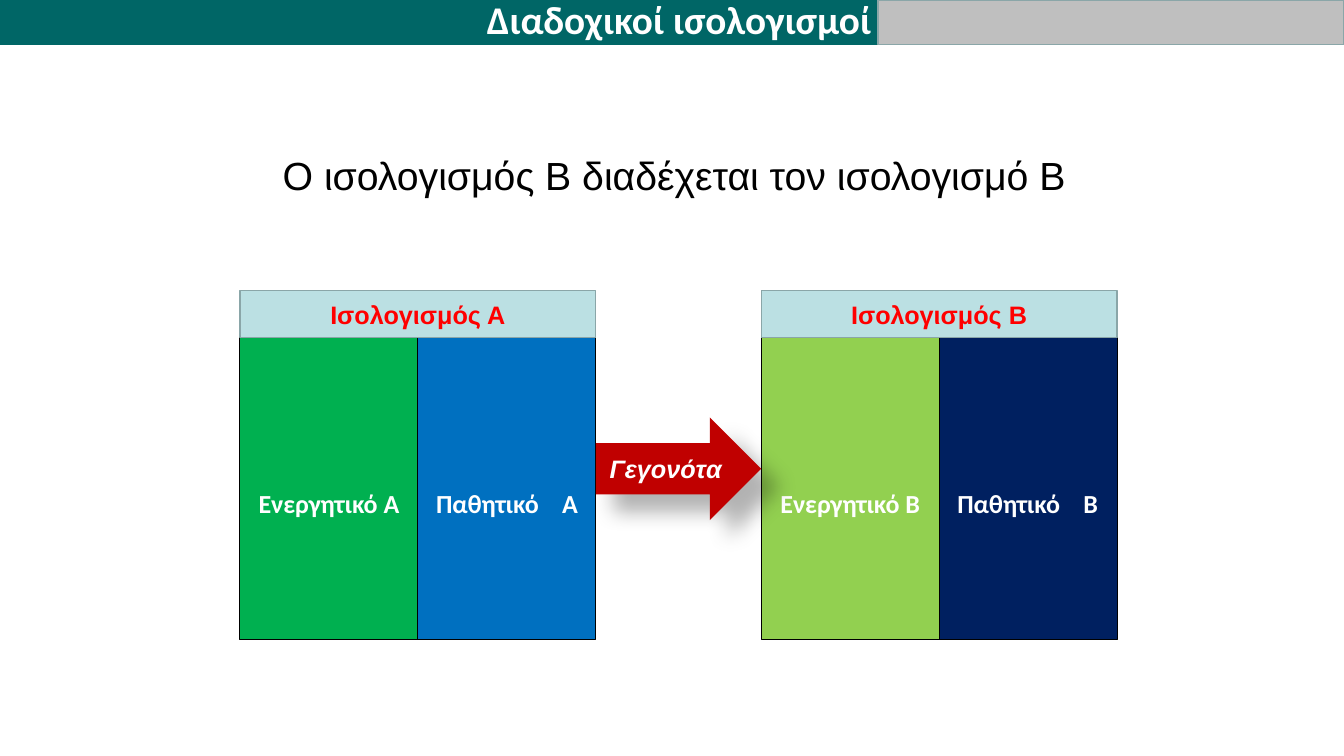
from lxml.etree import SubElement
from pptx import Presentation
from pptx.dml.color import RGBColor
from pptx.enum.shapes import MSO_SHAPE as Shape
from pptx.enum.text import MSO_ANCHOR as Anchor, MSO_AUTO_SIZE as AutoSize, PP_ALIGN as Align
from pptx.oxml.ns import qn
from pptx.util import Inches, Pt

WIDTH, HEIGHT = 13.33, 7.5
TEAL = RGBColor(0x00, 0x66, 0x66)
GRAY = RGBColor(0xBF, 0xBF, 0xBF)
EDGE = RGBColor(0x8A, 0xA6, 0xA8)
PALE = RGBColor(0xBB, 0xE0, 0xE3)
GREEN = RGBColor(0x00, 0xB0, 0x50)
BLUE = RGBColor(0x00, 0x70, 0xC0)
LIME = RGBColor(0x92, 0xD0, 0x50)
NAVY = RGBColor(0x00, 0x20, 0x60)
CRIMSON = RGBColor(0xC0, 0x00, 0x00)
RED = RGBColor(0xFF, 0x00, 0x00)
BLACK = RGBColor(0x00, 0x00, 0x00)
WHITE = RGBColor(0xFF, 0xFF, 0xFF)


def paint(shape, fill, line=None, weight=0.75):
    shape.fill.solid()
    shape.fill.fore_color.rgb = fill
    if line is None:
        shape.line.fill.background()
    else:
        shape.line.color.rgb = line
        shape.line.width = Pt(weight)


def add_block(slide, box, fill, line=None, weight=0.75, kind=Shape.RECTANGLE):
    block = slide.shapes.add_shape(kind, *map(Inches, box))
    block.shadow.inherit = False
    paint(block, fill, line, weight)
    return block


def write(shape, text, size, color, font="Arial", bold=True, italic=False, align=Align.CENTER):
    frame = shape.text_frame
    frame.word_wrap = True
    frame.vertical_anchor = Anchor.MIDDLE
    paragraph = frame.paragraphs[0]
    paragraph.alignment = align
    run = paragraph.add_run()
    run.text = text
    run.font.name = font
    run.font.size = Pt(size)
    run.font.bold = bold
    run.font.italic = italic
    run.font.color.rgb = color
    return run


def add_header(slide, box):
    left, top, width, height = box
    split = 8.71
    title = slide.shapes.title
    title.left, title.top, title.width, title.height = map(Inches, (left, top, split, height))
    paint(title, TEAL, TEAL)
    frame = title.text_frame
    frame.auto_size = AutoSize.NONE
    frame.margin_left = frame.margin_right = Inches(0.07)
    frame.margin_top = frame.margin_bottom = Inches(0.04)
    frame.paragraphs[0].line_spacing = 0.9
    write(title, "Διαδοχικοί ισολογισμοί", 28, WHITE, "Calibri", align=Align.RIGHT)
    add_block(slide, (left + split, top, width - split, height), GRAY, EDGE, 1)


def add_statement(slide, box):
    statement = slide.shapes.add_textbox(*map(Inches, box))
    write(statement, "Ο ισολογισμός Β διαδέχεται τον ισολογισμό Β", 28, BLACK, bold=False)


def add_side(slide, box, text, fill):
    side = add_block(slide, box, fill, BLACK)
    tabbed = "\t" in text
    if tabbed:
        side.text_frame.margin_left = Inches(0.18)
        side.text_frame.margin_right = 0
        properties = side.text_frame.paragraphs[0]._p.get_or_add_pPr()
        stops = SubElement(properties, qn("a:tabLst"))
        SubElement(stops, qn("a:tab"), pos=str(Inches(1.25)), algn="l")
    label = write(side, text, 32, WHITE, "Calibri", align=Align.LEFT if tabbed else Align.CENTER)
    label._r.get_or_add_rPr().set("baseline", "-25000")


def add_balance_sheet(slide, box, letter, assets_fill, liabilities_fill):
    left, top, width, height = box
    caption_height = 0.47
    sides = (("Ενεργητικό ", assets_fill), ("Παθητικό\t", liabilities_fill))
    for column, (name, fill) in enumerate(sides):
        side_box = (left + column * width / 2, top + caption_height, width / 2, height - caption_height)
        add_side(slide, side_box, name + letter, fill)
    caption = add_block(slide, (left, top, width, caption_height), PALE, EDGE, 1)
    write(caption, f"Ισολογισμός {letter}", 18, RED)


def add_events_arrow(slide, box):
    arrow = add_block(slide, box, CRIMSON, kind=Shape.RIGHT_ARROW)
    effects = arrow._element.spPr.find(qn("a:effectLst"))
    shadow = SubElement(effects, qn("a:outerShdw"), blurRad=str(Pt(15)), dist=str(Pt(18)),
                        dir="2700000", algn="tl", rotWithShape="0")
    tint = SubElement(shadow, qn("a:srgbClr"), val=str(BLACK))
    SubElement(tint, qn("a:alpha"), val="30000")
    write(arrow, "Γεγονότα", 18, WHITE, italic=True)


def main():
    deck = Presentation()
    deck.slide_width, deck.slide_height = Inches(WIDTH), Inches(HEIGHT)
    slide = deck.slides.add_slide(deck.slide_layouts[5])
    sheet_left, sheet_top, sheet_width, sheet_height = 2.38, 2.88, 3.53, 3.46
    arrow_width, arrow_height = 1.64, 1.02
    arrow_left = sheet_left + sheet_width
    add_header(slide, (0, 0, WIDTH, 0.44))
    add_statement(slide, (1.21, 1.42, 10.95, 0.62))
    sheets = (("Α", GREEN, BLUE), ("Β", LIME, NAVY))
    for index, (letter, assets_fill, liabilities_fill) in enumerate(sheets):
        left = sheet_left + index * (sheet_width + arrow_width)
        add_balance_sheet(slide, (left, sheet_top, sheet_width, sheet_height),
                          letter, assets_fill, liabilities_fill)
    add_events_arrow(slide, (arrow_left, 4.14, arrow_width, arrow_height))
    deck.save("out.pptx")


if __name__ == "__main__":
    main()
